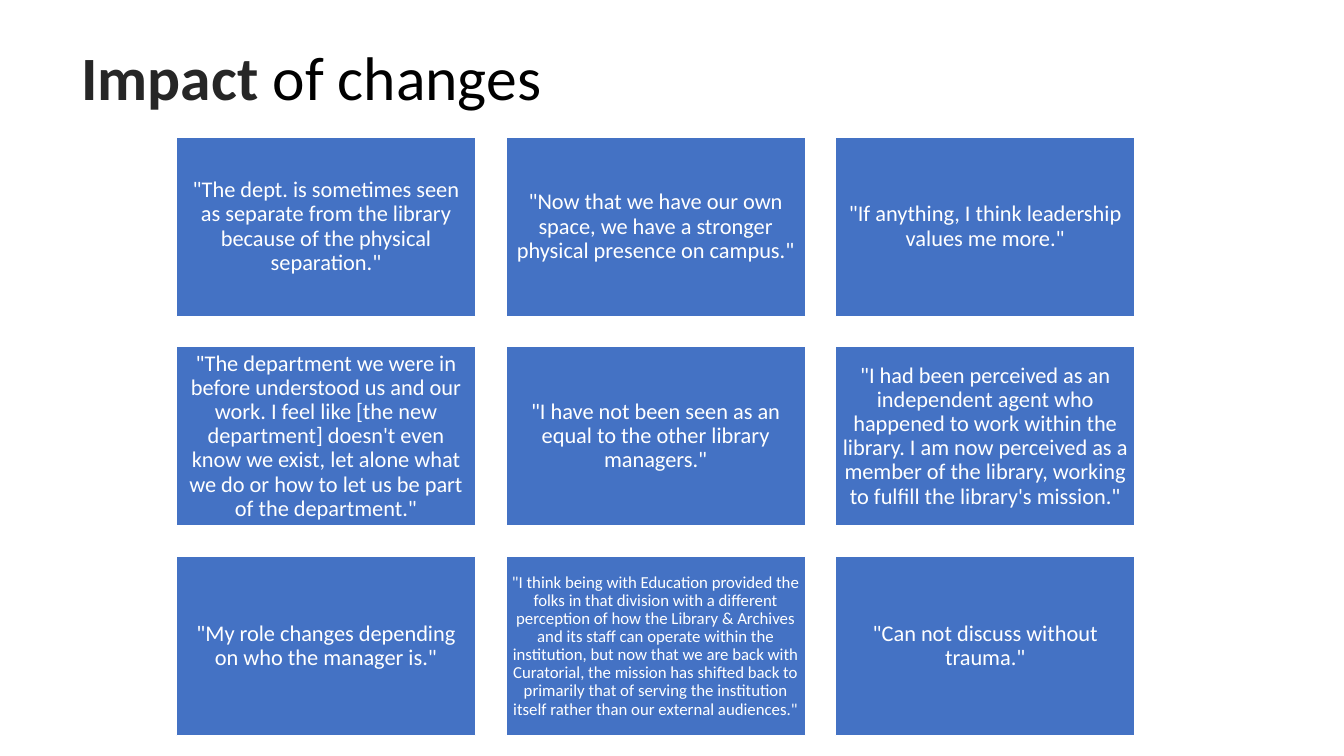
import pptx
import pptx.util
import pptx.dml.color
import pptx.enum.shapes
import pptx.enum.text

Pt = pptx.util.Pt
ALIGN = pptx.enum.text.PP_ALIGN
COLOURS = {"quote box": "4472C4", "white": "FFFFFF", "emphasis": "262626", "title": "000000"}
FONT = "Calibri"
COLUMNS, GAP = 3, 21.6

# Each quote with its text size and inner margin
QUOTES = [
    ('"The dept. is sometimes seen as separate from the library because of the physical separation."', 16, 5),
    ('"Now that we have our own space, we have a stronger physical presence on campus."', 16, 5),
    ('"If anything, I think leadership values me more."', 16, 5),
    ('"The department we were in before understood us and our work. I feel like [the new department] '
     "doesn't even know we exist, let alone what we do or how to let us be part of the department.\"", 16, 5),
    ('"I have not been seen as an equal to the other library managers."', 16, 5),
    ('"I had been perceived as an independent agent who happened to work within the library. '
     "I am now perceived as a member of the library, working to fulfill the library's mission.\"", 16, 5),
    ('"My role changes depending on who the manager is."', 16, 5),
    ('"I think being with Education provided the folks in that division with a different perception '
     'of how the Library & Archives and its staff can operate within the institution, but now that '
     'we are back with Curatorial, the mission has shifted back to primarily that of serving the '
     'institution itself rather than our external audiences."', 12, 3.6),
    ('"Can not discuss without trauma."', 16, 5),
]


def rgb(name):
    return pptx.dml.color.RGBColor.from_string(COLOURS[name])


def add_text(frame, text, size=16, colour="white", bold=False, align=ALIGN.CENTER):
    """Append a formatted run to the first paragraph of a text frame."""
    frame.word_wrap = True
    frame.vertical_anchor = pptx.enum.text.MSO_ANCHOR.MIDDLE
    paragraph = frame.paragraphs[0]
    paragraph.alignment = align
    paragraph.line_spacing = 0.9
    run = paragraph.add_run()
    run.text = text
    run.font.name = FONT
    run.font.size = Pt(size)
    run.font.bold = bold
    run.font.color.rgb = rgb(colour)


def add_title(slide, left, top, width, height):
    heading = slide.shapes.add_textbox(Pt(left), Pt(top), Pt(width), Pt(height)).text_frame
    add_text(heading, "Impact", size=44, colour="emphasis", bold=True, align=ALIGN.LEFT)
    add_text(heading, " of changes", size=44, colour="title", align=ALIGN.LEFT)


def add_quote(slide, quote, size, margin, left, top, width, height):
    box = slide.shapes.add_shape(pptx.enum.shapes.MSO_SHAPE.RECTANGLE,
                                 Pt(left), Pt(top), Pt(width), Pt(height))
    box.shadow.inherit = False
    box.fill.solid()
    box.fill.fore_color.rgb = rgb("quote box")
    box.line.color.rgb = rgb("white")
    box.line.width = Pt(1)
    frame = box.text_frame
    frame.margin_left = frame.margin_right = Pt(margin)
    frame.margin_top = frame.margin_bottom = Pt(margin)
    add_text(frame, quote, size=size)


def add_quote_grid(slide, left, top, width, height):
    rows = len(QUOTES) // COLUMNS
    box_width = (width - GAP * (COLUMNS - 1)) / COLUMNS
    box_height = (height - GAP * (rows - 1)) / rows
    for index, (quote, size, margin) in enumerate(QUOTES):
        row, column = divmod(index, COLUMNS)
        add_quote(slide, quote, size, margin,
                  left + column * (box_width + GAP), top + row * (box_height + GAP),
                  box_width, box_height)


def main():
    deck = pptx.Presentation()
    deck.slide_width, deck.slide_height = Pt(960), Pt(540)
    slide = deck.slides.add_slide(deck.slide_layouts[6])
    # Heading
    add_title(slide, 51.1, 5, 828, 104.4)
    # Three by three quotes
    add_quote_grid(slide, 126, 97.9, 684.7, 427.7)
    deck.save("out.pptx")


if __name__ == "__main__":
    main()
